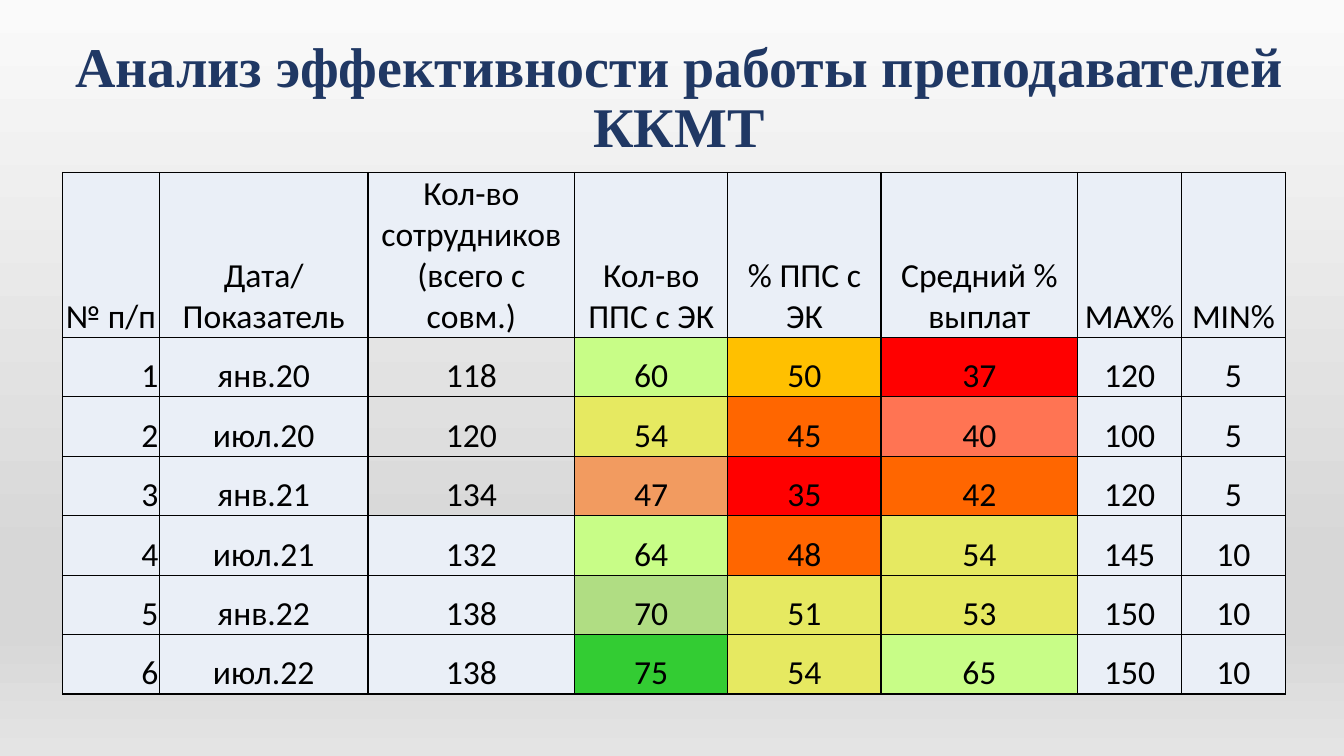
from copy import deepcopy

from lxml import etree
from pptx import Presentation
from pptx.dml.color import RGBColor
from pptx.enum.text import MSO_ANCHOR, MSO_AUTO_SIZE, PP_ALIGN
from pptx.oxml.ns import qn
from pptx.util import Inches, Pt

CENTER, RIGHT = PP_ALIGN.CENTER, PP_ALIGN.RIGHT
MIDDLE, BOTTOM = MSO_ANCHOR.MIDDLE, MSO_ANCHOR.BOTTOM
NO_AUTOFIT = MSO_AUTO_SIZE.NONE
TITLE_ONLY = 5

NAVY, BLACK, PALE = "203864", "000000", "EAEFF7"
LIME, YELLOW, AMBER, ORANGE = "C8FD87", "E6E961", "FFC000", "FF6600"
RED, CORAL, PEACH, SAGE, GREEN = "FF0000", "FF7453", "F29B60", "B0DD83", "33CC33"

BACKGROUND_STOPS = [(0, "FAFAFA"), (0.74, "D7D7D7"), (0.83, "D7D7D7"), (1, "E4E4E4")]
TITLE_FORMAT = {"name": "Times New Roman", "size": Pt(40), "bold": True}
CELL_FORMAT = {"name": "Calibri", "size": Pt(24), "bold": False}
CELL_LAYOUT = {
    "vertical_anchor": BOTTOM,
    "margin_left": Inches(0.01),
    "margin_right": Inches(0.01),
    "margin_top": Inches(0.01),
    "margin_bottom": 0,
}

COLUMN_WIDTHS = [0.96, 2.07, 2.05, 1.52, 1.52, 1.95, 1.03, 1.03]
HEADER_HEIGHT, ROW_HEIGHT = 1.63, 0.59
HEADERS = ["№ п/п", "Дата/Показатель", "Кол-во сотрудников (всего с совм.)",
           "Кол-во ППС с ЭК", "% ППС с ЭК", "Средний % выплат", "МАХ%", "MIN%"]
RESULTS = [
    ["янв.20", 118, 60, 50, 37, 120, 5],
    ["июл.20", 120, 54, 45, 40, 100, 5],
    ["янв.21", 134, 47, 35, 42, 120, 5],
    ["июл.21", 132, 64, 48, 54, 145, 10],
    ["янв.22", 138, 70, 51, 53, 150, 10],
    ["июл.22", 138, 75, 54, 65, 150, 10],
]
# Fills of the staff, teacher count, teacher share and average payment columns
RATING_FILLS = [
    [None, LIME, AMBER, RED],
    [None, YELLOW, ORANGE, CORAL],
    [None, PEACH, RED, ORANGE],
    [PALE, LIME, ORANGE, YELLOW],
    [PALE, SAGE, YELLOW, YELLOW],
    [PALE, GREEN, YELLOW, LIME],
]


def rgb(color):
    return RGBColor.from_string(color)


def apply_format(target, values):
    for attribute, value in values.items():
        setattr(target, attribute, value)


def paint_background(slide):
    fill = slide.background.fill
    fill.gradient()
    fill.gradient_angle = 270
    stop_list = slide.element.find(".//" + qn("a:gsLst"))
    for _ in range(len(BACKGROUND_STOPS) - len(stop_list)):
        stop_list.append(deepcopy(stop_list[0]))
    for stop, (position, color) in zip(fill.gradient_stops, BACKGROUND_STOPS):
        stop.position = position
        stop.color.rgb = rgb(color)


def write_paragraph(frame, text, font_format, color, alignment):
    paragraph = frame.paragraphs[0]
    paragraph.alignment = alignment
    run = paragraph.add_run()
    run.text = text
    apply_format(run.font, font_format)
    run.font.color.rgb = rgb(color)
    return paragraph


def add_title(slide, text):
    title = slide.shapes.title
    apply_format(title, {"left": Inches(0.14), "top": Inches(0.26),
                         "width": Inches(13.19), "height": Inches(1.45)})
    apply_format(title.text_frame, {"auto_size": NO_AUTOFIT, "word_wrap": True,
                                    "vertical_anchor": MIDDLE})
    heading = write_paragraph(title.text_frame, text, TITLE_FORMAT, NAVY, CENTER)
    heading.line_spacing = 0.9


def add_borders(cell):
    properties = cell._tc.get_or_add_tcPr()
    for side in ("a:lnL", "a:lnR", "a:lnT", "a:lnB"):
        border = etree.SubElement(properties, qn(side), w=str(Pt(1)))
        line_fill = etree.SubElement(border, qn("a:solidFill"))
        etree.SubElement(line_fill, qn("a:srgbClr"), val=BLACK)


def fill_cell(cell, text, color, alignment):
    apply_format(cell, CELL_LAYOUT)
    add_borders(cell)
    if color:
        cell.fill.solid()
        cell.fill.fore_color.rgb = rgb(color)
    else:
        cell.fill.background()
    write_paragraph(cell.text_frame, str(text), CELL_FORMAT, BLACK, alignment)


def add_results_table(slide):
    rows = [HEADERS] + [[number, *result] for number, result in enumerate(RESULTS, 1)]
    fills = [[PALE] * len(HEADERS)]
    fills += [[PALE, PALE, *ratings, PALE, PALE] for ratings in RATING_FILLS]
    heights = [HEADER_HEIGHT] + [ROW_HEIGHT] * len(RESULTS)
    table = slide.shapes.add_table(
        len(rows), len(HEADERS), Inches(0.62), Inches(1.71),
        Inches(sum(COLUMN_WIDTHS)), Inches(sum(heights))).table
    apply_format(table, {"first_row": False, "horz_banding": False})
    for column, width in zip(table.columns, COLUMN_WIDTHS):
        column.width = Inches(width)
    for r, (row, height) in enumerate(zip(rows, heights)):
        table.rows[r].height = Inches(height)
        for c, text in enumerate(row):
            alignment = RIGHT if r and c == 0 else CENTER
            fill_cell(table.cell(r, c), text, fills[r][c], alignment)


def main():
    presentation = Presentation()
    presentation.slide_width = Inches(13.33)
    presentation.slide_height = Inches(7.5)
    slide = presentation.slides.add_slide(presentation.slide_layouts[TITLE_ONLY])
    paint_background(slide)
    add_title(slide, "Анализ эффективности работы преподавателей ККМТ")
    add_results_table(slide)
    presentation.save("out.pptx")


if __name__ == "__main__":
    main()
